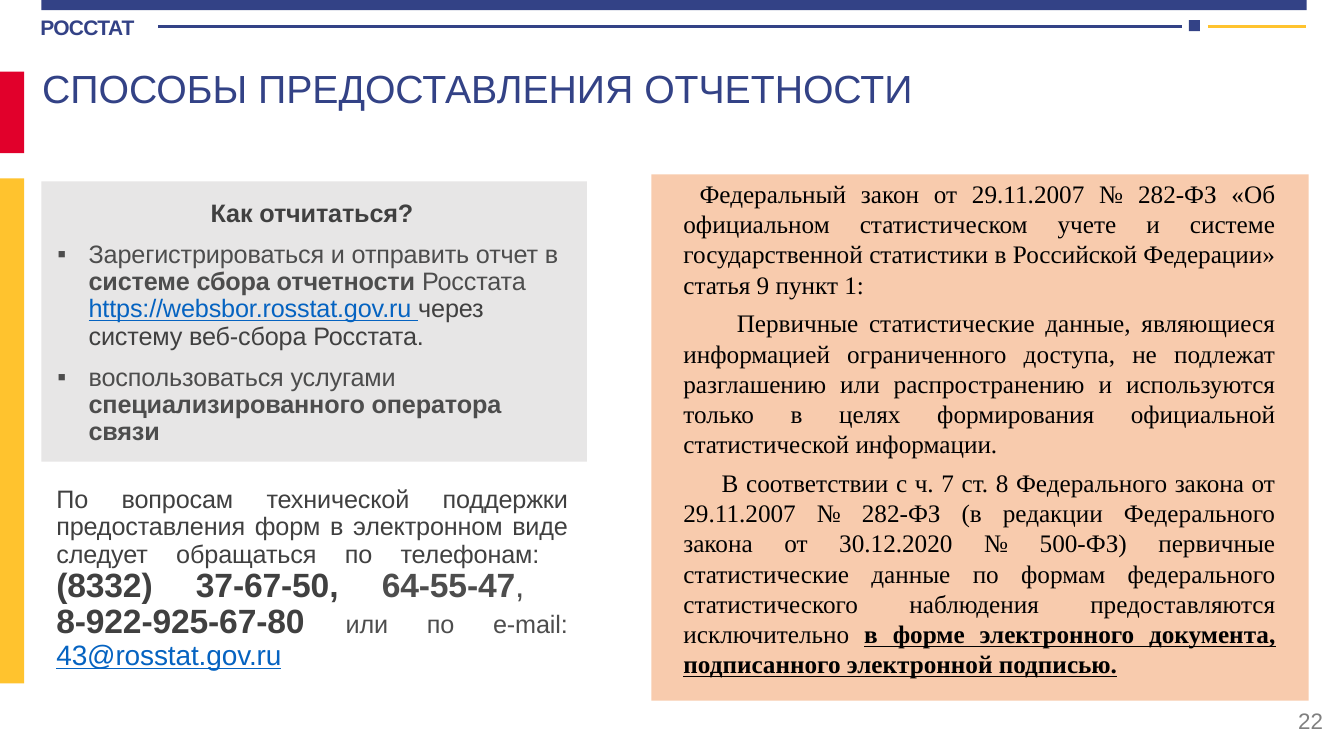
from lxml.etree import SubElement
from pptx import Presentation
from pptx.dml.color import RGBColor
from pptx.enum.shapes import MSO_CONNECTOR, MSO_SHAPE
from pptx.enum.text import MSO_ANCHOR, PP_ALIGN
from pptx.oxml.ns import qn
from pptx.util import Inches, Pt

COLORS = {
    "navy": "334286", "red": "E1002B", "yellow": "FFC32E", "gray": "E7E6E6",
    "peach": "F8CBAD", "dark": "404040", "medium": "4D4D4D", "link": "0563C1",
    "number": "808080", "black": "000000",
}
WIDTH, HEIGHT = Inches(13.33), Inches(7.5)


def color(name):
    return RGBColor.from_string(COLORS[name])


def across(percent):
    return round(WIDTH * percent / 100)


def down(percent):
    return round(HEIGHT * percent / 100)


def place(left, top, width, height):
    return across(left), down(top), across(width), down(height)


def add_block(page, area, fill):
    block = page.shapes.add_shape(MSO_SHAPE.RECTANGLE, *place(*area))
    block.shadow.inherit = False
    block.fill.solid()
    block.fill.fore_color.rgb = color(fill)
    block.line.fill.background()


def add_rule(page, start, end, height, stroke):
    rule = page.shapes.add_connector(
        MSO_CONNECTOR.STRAIGHT, across(start), down(height), across(end), down(height))
    rule.line.color.rgb = color(stroke)
    rule.line.width = Pt(2)
    SubElement(rule._element.spPr, qn("a:effectLst"))


def add_box(page, area, anchor=MSO_ANCHOR.TOP):
    box = page.shapes.add_textbox(*place(*area))
    box.text_frame.word_wrap = True
    box.text_frame.vertical_anchor = anchor
    return box.text_frame


def add_para(frame, align=PP_ALIGN.LEFT, before=0, spacing=None,
             margin=0, indent=0, bullet=None):
    fresh = not frame.paragraphs[0].runs
    para = frame.paragraphs[0] if fresh else frame.add_paragraph()
    para.alignment = align
    para.space_before = Pt(before)
    if spacing:
        para.line_spacing = spacing
    properties = para._p.get_or_add_pPr()
    properties.set("marL", str(Inches(margin)))
    properties.set("indent", str(Inches(indent)))
    if bullet:
        SubElement(properties, qn("a:buFont")).set("typeface", "Arial")
        SubElement(properties, qn("a:buChar")).set("char", bullet)
    return para


def add_span(para, text, tint, size=18, bold=False, underline=False,
             face="Arial", tracking=0):
    span = para.add_run()
    span.text = text
    span.font.name = face
    span.font.size = Pt(size)
    span.font.bold = bold
    span.font.underline = underline
    span.font.color.rgb = color(tint)
    if tracking:
        span._r.get_or_add_rPr().set("spc", str(round(tracking * 100)))


def add_header(page):
    add_block(page, (3.08, 0, 94.15, 1.33), "navy")
    add_block(page, (0, 9.47, 1.8, 10.8), "red")
    add_block(page, (0, 23.6, 1.8, 66.8), "yellow")
    add_rule(page, 11.78, 87.92, 3.47, "navy")
    add_rule(page, 89.87, 97.15, 3.47, "yellow")
    add_block(page, (88.45, 2.67, 0.83, 1.47), "navy")
    agency = add_box(page, (2.93, 1.73, 8.63, 4.27))
    agency.margin_left = agency.margin_right = agency.margin_bottom = 0
    agency.margin_top = Inches(0.01)
    add_span(add_para(agency, margin=0.01), "РОССТАТ", "navy", 15, True, tracking=-0.5)
    title = add_box(page, (2.4, 7.87, 71.94, 13.6))
    add_span(add_para(title), "СПОСОБЫ ПРЕДОСТАВЛЕНИЯ ОТЧЕТНОСТИ", "navy", 28)


def add_reporting(page):
    add_block(page, (3.08, 24, 40.59, 37.07), "gray")
    frame = add_box(page, (3.38, 25.87, 39.61, 69.73))

    def write(para, *spans):
        for text, tint, *style in spans:
            add_span(para, text, tint, *style, tracking=-0.1)

    write(add_para(frame, PP_ALIGN.CENTER, spacing=0.9, margin=0.01),
          ("Как отчитаться?", "dark", 18, True))
    steps = [
        [("Зарегистрироваться и отправить отчет в ", "medium"),
         ("системе сбора отчетности", "medium", 18, True),
         (" Росстата ", "medium"),
         ("https://websbor.rosstat.gov.ru ", "link", 18, False, True),
         ("через систему веб-сбора Росстата.", "dark")],
        [("воспользоваться услугами ", "medium"),
         ("специализированного оператора связи", "medium", 18, True)],
    ]
    for spans in steps:
        write(add_para(frame, before=10, spacing=0.9, margin=0.33, indent=-0.31,
                       bullet="▪"), *spans)
    contact = add_para(frame, PP_ALIGN.JUSTIFY, before=29, spacing=0.9, margin=0.01)
    write(contact, ("По вопросам технической поддержки предоставления форм в "
                    "электронном виде следует обращаться по телефонам: ", "dark"))
    contact.add_line_break()
    write(contact, ("(8332) 37-67-50, ", "dark", 24, True),
          ("64-55-47", "medium", 24, True), (", ", "medium", 24))
    contact.add_line_break()
    write(contact, ("8-922-925-67-80 ", "dark", 24, True),
          ("или по е-mail:", "medium"), (" ", "medium", 24),
          ("43@rosstat.gov.ru", "link", 20, False, True))


def add_law(page):
    add_block(page, (48.46, 23.07, 48.91, 69.6), "peach")
    frame = add_box(page, (50.11, 22.93, 45.54, 72.27))
    clauses = [
        (0, 0.16, "Федеральный закон от 29.11.2007 № 282-ФЗ «Об официальном "
         "статистическом учете и системе государственной статистики в Российской "
         "Федерации» статья 9 пункт 1:"),
        (6, 0.53, "Первичные статистические данные, являющиеся информацией "
         "ограниченного доступа, не подлежат разглашению или распространению и "
         "используются только в целях формирования официальной статистической "
         "информации."),
        (6, 0.38, "В соответствии с ч. 7 ст. 8 Федерального закона от 29.11.2007 "
         "№ 282-ФЗ (в редакции Федерального закона от 30.12.2020 № 500-ФЗ) первичные "
         "статистические данные по формам федерального статистического наблюдения "
         "предоставляются исключительно "),
    ]
    for before, indent, text in clauses:
        para = add_para(frame, PP_ALIGN.JUSTIFY, before, indent=indent)
        add_span(para, text, "black", face="Times New Roman")
    add_span(para, "в форме электронного документа, подписанного электронной подписью.",
             "black", bold=True, underline=True, face="Times New Roman")


def add_page_number(page):
    frame = add_box(page, (76.67, 92.67, 22.51, 5.33), MSO_ANCHOR.MIDDLE)
    add_span(add_para(frame, PP_ALIGN.RIGHT), "22", "number", 16)


def main():
    deck = Presentation()
    deck.slide_width, deck.slide_height = WIDTH, HEIGHT
    page = deck.slides.add_slide(deck.slide_layouts[6])
    add_header(page)
    add_reporting(page)
    add_law(page)
    add_page_number(page)
    deck.save("out.pptx")


if __name__ == "__main__":
    main()
